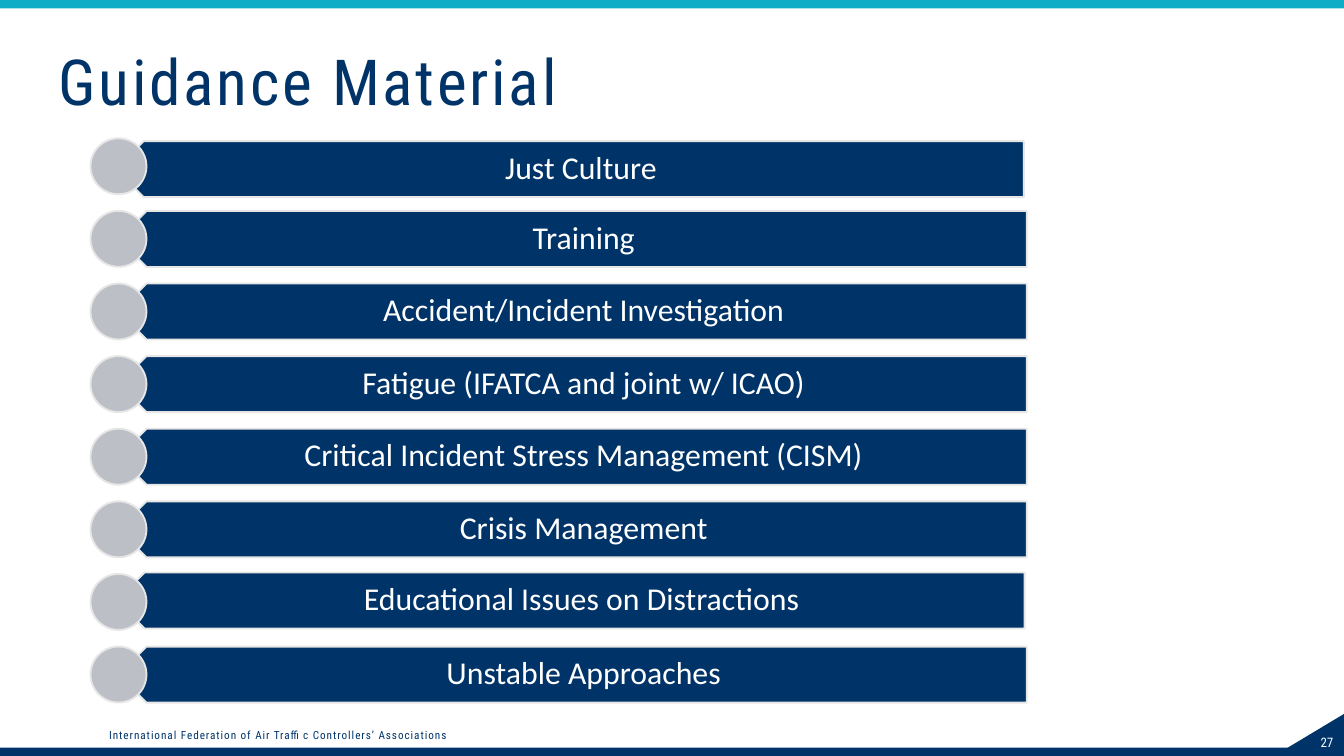
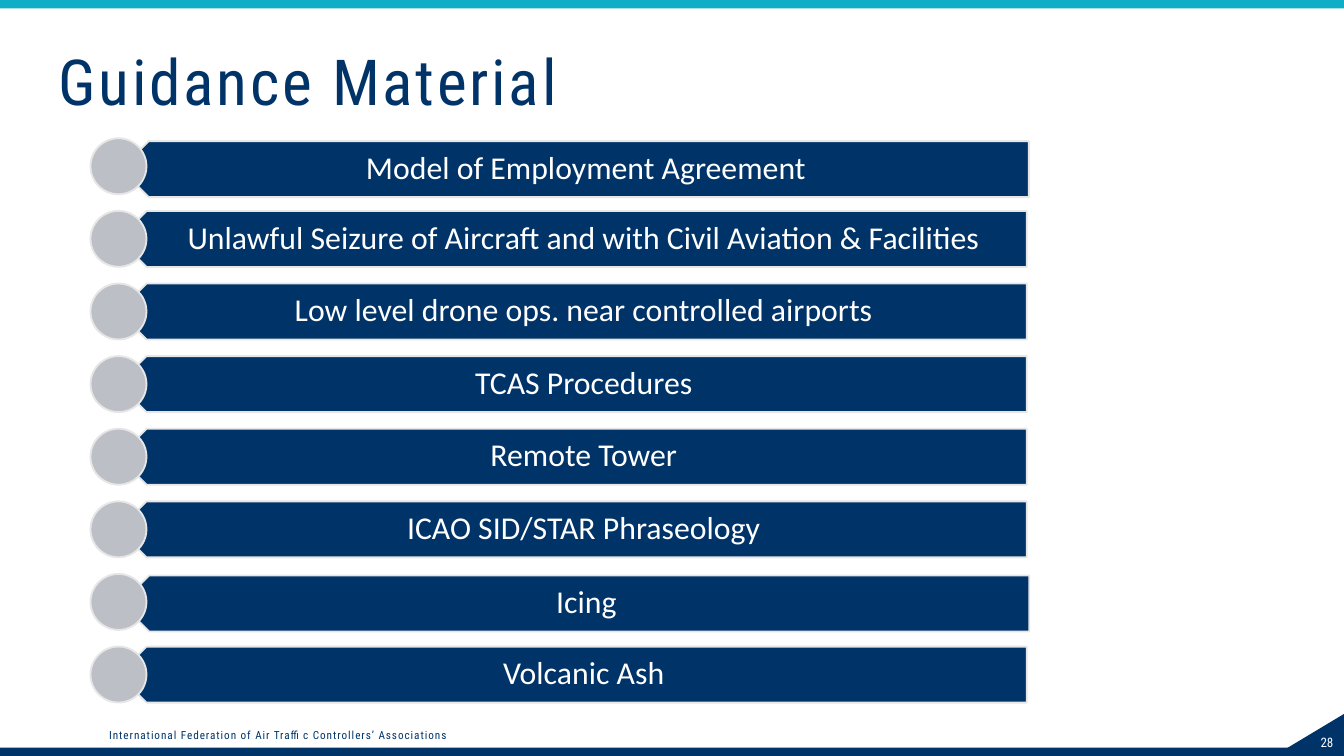
"""Build two guidance material slides with a shared frame and bar lists."""
from pptx import Presentation
from pptx.dml.color import RGBColor
from pptx.enum.shapes import MSO_SHAPE
from pptx.enum.text import MSO_ANCHOR, MSO_AUTO_SIZE, PP_ALIGN
from pptx.util import Pt

RECTANGLE = MSO_SHAPE.RECTANGLE
TRIANGLE = MSO_SHAPE.RIGHT_TRIANGLE
PENTAGON = MSO_SHAPE.PENTAGON
OVAL = MSO_SHAPE.OVAL
MIDDLE = MSO_ANCHOR.MIDDLE
NO_FIT = MSO_AUTO_SIZE.NONE
LEFT, CENTER, RIGHT = PP_ALIGN.LEFT, PP_ALIGN.CENTER, PP_ALIGN.RIGHT

NAVY, TEAL, GREY, PALE, WHITE = "003469", "10ADC6", "BDBFC7", "E7E6E6", "FFFFFF"
HEADING_FONT, BODY_FONT = "Roboto Condensed", "Calibri"
WIDTH, HEIGHT = 720, 405
BAND = 4.5
LIST_TOP, LIST_PITCH, ROW_HEIGHT = 74.1, 38.9, 30
DOT_LEFT, BAR_LEFT, BAR_WIDTH = 48.5, 63.5, 486.5
LABEL_INDENT, LABEL_WIDTH = 7.6, 479.5
TITLE = "Guidance Material"
FOOTER = "International Federation of Air Traffic Controllers’ Associations"

PAGES = [
    (27, [
        "Just Culture",
        "Training",
        "Accident/Incident Investigation",
        "Fatigue (IFATCA and joint w/ ICAO)",
        "Critical Incident Stress Management (CISM)",
        "Crisis Management",
        "Educational Issues on Distractions",
        "Unstable Approaches",
    ], {0: (-1.5, 1.5), 6: (-1.1, -0.8)}),
    (28, [
        "Model of Employment Agreement",
        "Unlawful Seizure of Aircraft and with Civil Aviation & Facilities",
        "Low level drone ops. near controlled airports",
        "TCAS Procedures",
        "Remote Tower",
        "ICAO SID/STAR Phraseology",
        "Icing",
        "Volcanic Ash",
    ], {0: (1.2, 1.5), 6: (1.4, 0.8)}),
]


def color(value):
    """Turn a hex string into a colour."""
    return RGBColor.from_string(value)


class Builder:
    """Hold the deck style and the current page."""

    def __init__(self):
        """Start an empty deck of the right size."""
        self.deck = Presentation()
        self.deck.slide_width, self.deck.slide_height = Pt(WIDTH), Pt(HEIGHT)
        self.page = None

    def shape(self, kind, left, top, width, height, fill, line=None):
        """Add a filled preset shape with an optional outline."""
        shape = self.page.shapes.add_shape(
            kind, Pt(left), Pt(top), Pt(width), Pt(height))
        shape.shadow.inherit = False
        shape.fill.solid()
        shape.fill.fore_color.rgb = color(fill)
        if line:
            shape.line.color.rgb = color(line)
            shape.line.width = Pt(1)
        else:
            shape.line.fill.background()
        return shape

    def set_text(self, box, text, size, font, ink, align=LEFT, tracking=0,
                 insets=(5, 3, 5, 3), wrap=True):
        """Fill a box with one formatted paragraph and return it."""
        frame = box.text_frame
        frame.word_wrap = wrap
        frame.auto_size = NO_FIT
        frame.vertical_anchor = MIDDLE
        (frame.margin_left, frame.margin_top,
         frame.margin_right, frame.margin_bottom) = map(Pt, insets)
        para = frame.paragraphs[0]
        para.alignment = align
        span = para.add_run()
        span.text = text
        para.font.size, para.font.name = Pt(size), font
        para.font.color.rgb = color(ink)
        if tracking:
            span.font._element.set("spc", str(int(tracking * 100)))
        return para

    def label(self, left, top, width, height, text, *style, **options):
        """Add a text box and return its paragraph."""
        box = self.page.shapes.add_textbox(
            Pt(left), Pt(top), Pt(width), Pt(height))
        return self.set_text(box, text, *style, **options)

    def title(self, text):
        """Place and format the title placeholder."""
        box = self.page.shapes.title
        box.left, box.top, box.width, box.height = map(Pt, (26.5, 6, 620.5, 78.5))
        para = self.set_text(box, text, 34, HEADING_FONT, NAVY, tracking=1.5)
        para.line_spacing = 0.9

    def frame(self, number):
        """Draw the bands, corner, footer and page number."""
        self.shape(RECTANGLE, 0, HEIGHT - BAND, WIDTH, BAND, NAVY)
        self.shape(RECTANGLE, 0, 0, WIDTH, BAND, TEAL)
        corner = self.shape(TRIANGLE, 682.5, 382.5, 37.5, 22.5, NAVY)
        corner.element.spPr.xfrm.set("flipH", "1")
        self.label(53.5, 388.8, 221, 10, FOOTER, 6, HEADING_FONT, NAVY,
                   tracking=0.5, wrap=False)
        self.label(687.6, 392.5, 31.7, 10, str(number), 7, HEADING_FONT, WHITE,
                   align=RIGHT)

    def row(self, top, text, shift, drop):
        """Draw one labelled bar with its dot."""
        left, bar_top = BAR_LEFT + shift, top + drop
        bar = self.shape(PENTAGON, left, bar_top, BAR_WIDTH, ROW_HEIGHT, NAVY, PALE)
        bar.rotation = 180
        para = self.label(left + LABEL_INDENT, bar_top, LABEL_WIDTH, ROW_HEIGHT,
                          text, 17, BODY_FONT, WHITE, align=CENTER,
                          insets=(13.2, 5, 9.4, 5))
        para.line_spacing = 0.9
        para.space_after = Pt(6)
        self.shape(OVAL, DOT_LEFT, top, ROW_HEIGHT, ROW_HEIGHT, GREY, PALE)

    def add_page(self, number, topics, nudges):
        """Add a page with its frame, title and list of topics."""
        self.page = self.deck.slides.add_slide(self.deck.slide_layouts[5])
        self.frame(number)
        self.title(TITLE)
        for index, topic in enumerate(topics):
            self.row(LIST_TOP + index * LIST_PITCH, topic,
                     *nudges.get(index, (0, 0)))


def main():
    """Build and save the deck."""
    builder = Builder()
    for page in PAGES:
        builder.add_page(*page)
    builder.deck.save("out.pptx")


if __name__ == "__main__":
    main()
